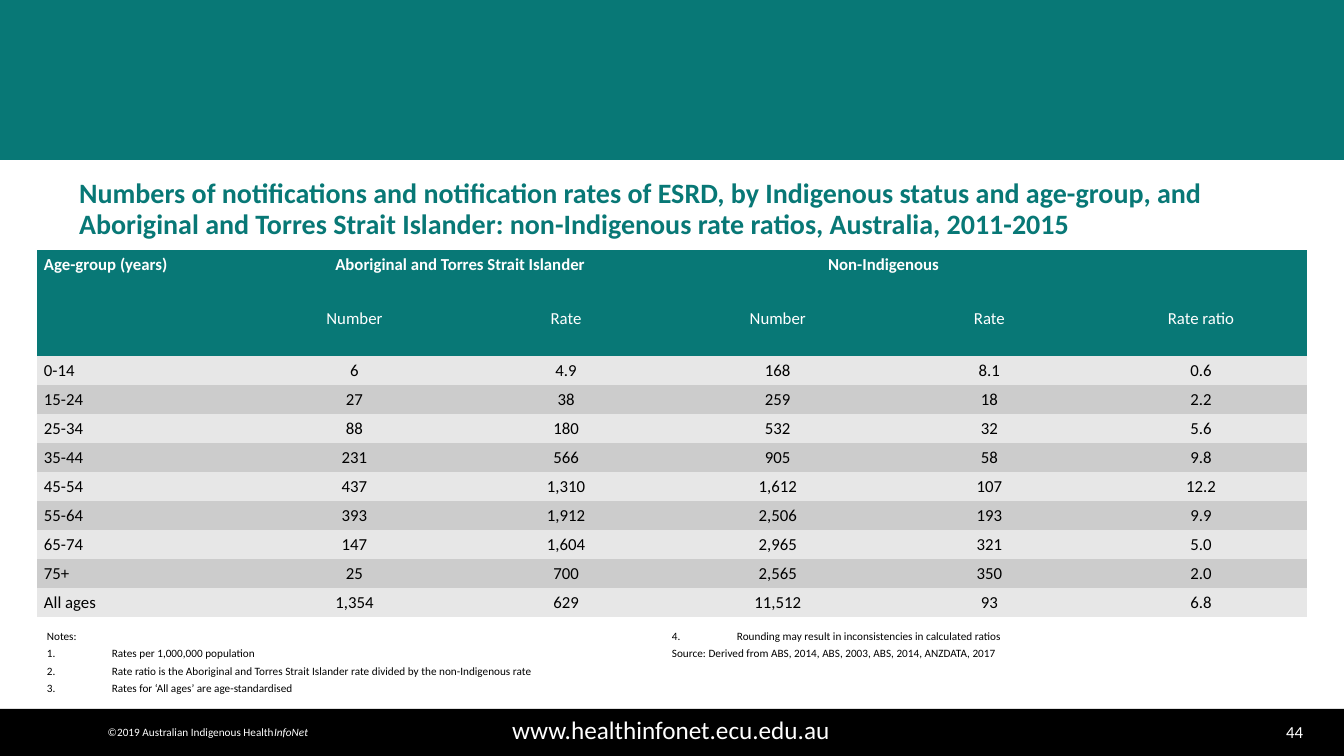
import pptx
import pptx.dml.color
import pptx.enum.shapes
import pptx.enum.text
import pptx.oxml
import pptx.oxml.ns
import pptx.util

PX = 914400 / 100.8
COLORS = {"teal": "087876", "black": "000000", "white": "FFFFFF",
          "light": "E7E7E7", "dark": "CCCCCC"}
ALIGN = pptx.enum.text.PP_ALIGN
ANCHOR = pptx.enum.text.MSO_ANCHOR
NO_GRID = "{2D5ABB26-0587-4C30-8999-92F81FD0307C}"


def px(n):
    return pptx.util.Emu(round(n * PX))


def rgb(name):
    return pptx.dml.color.RGBColor.from_string(COLORS[name])


def write(p, text, size=12, color="black", bold=False, italic=False,
          align=ALIGN.LEFT, after=0, line=None):
    p.alignment = align
    p.space_after = pptx.util.Pt(after)
    if line:
        p.line_spacing = line
    r = p.add_run()
    r.text = text
    r.font.name = "Calibri"
    r.font.size = pptx.util.Pt(size)
    r.font.bold = bold
    r.font.italic = italic
    r.font.color.rgb = rgb(color)


class Slide:
    def __init__(self, prs):
        self.s = prs.slides.add_slide(prs.slide_layouts[5])

    def band(self, x, y, w, h, color):
        sp = self.s.shapes.add_shape(pptx.enum.shapes.MSO_SHAPE.RECTANGLE,
                                     px(x), px(y), px(w), px(h))
        sp.shadow.inherit = False
        sp.fill.solid()
        sp.fill.fore_color.rgb = rgb(color)
        sp.line.fill.background()

    def title(self, x, y, w, h, text):
        sp = self.s.shapes.title
        sp.left, sp.top, sp.width, sp.height = px(x), px(y), px(w), px(h)
        tf = sp.text_frame
        tf.auto_size = pptx.enum.text.MSO_AUTO_SIZE.NONE
        tf.vertical_anchor = ANCHOR.MIDDLE
        write(tf.paragraphs[0], text, size=20, color="teal", bold=True, line=0.9)

    def box(self, x, y, w, h, wrap=True):
        tf = self.s.shapes.add_textbox(px(x), px(y), px(w), px(h)).text_frame
        tf.word_wrap = wrap
        return tf

    def label(self, x, y, w, h, text, wrap=True, **fmt):
        p = self.box(x, y, w, h, wrap).paragraphs[0]
        write(p, text, color="white", **fmt)
        return p

    def table(self, x, y, w, heights, rows, spans):
        cols = len(rows[0])
        tbl = self.s.shapes.add_table(len(rows), cols, px(x), px(y), px(w),
                                      px(sum(heights))).table
        tbl.horz_banding = False
        tbl._tbl.tblPr.find(pptx.oxml.ns.qn("a:tableStyleId")).text = NO_GRID
        for col in tbl.columns:
            col.width = px(w / cols)
        for i, row in enumerate(rows):
            tbl.rows[i].height = px(heights[i])
            header = i < 2
            fill = "teal" if header else ("light", "dark")[i % 2]
            for j, text in enumerate(row):
                cell = tbl.cell(i, j)
                cell.fill.solid()
                cell.fill.fore_color.rgb = rgb(fill)
                cell.vertical_anchor = ANCHOR.MIDDLE
                cell.margin_left = cell.margin_right = px(7)
                cell.margin_top = cell.margin_bottom = 0
                write(cell.text_frame.paragraphs[0], text, bold=i == 0,
                      color="white" if header else "black", after=5,
                      align=ALIGN.CENTER if j else ALIGN.LEFT)
        for i, first, last in spans:
            tbl.cell(i, first).merge(tbl.cell(i, last))

    def notes(self, x, y, w, h, items, source):
        tf = self.box(x, y, w, h)
        tf._txBody.bodyPr.set("numCol", "2")
        for i, text in enumerate(items):
            p = tf.paragraphs[0] if i == 0 else tf.add_paragraph()
            pPr = p._p.get_or_add_pPr()
            pPr.set("marL", str(px(65)))
            pPr.set("indent", str(px(-65)))
            tabs = pptx.oxml.parse_xml(
                "<a:tabLst %s/>" % pptx.oxml.ns.nsdecls("a"))
            for stop in (10, 50):
                tab = tabs.makeelement(pptx.oxml.ns.qn("a:tab"),
                                       {"pos": str(px(stop)), "algn": "l"})
                tabs.append(tab)
            pPr.append(tabs)
            write(p, text, size=8, after=3)
        write(tf.add_paragraph(), source, size=8, after=5, align=ALIGN.JUSTIFY)


def main():
    prs = pptx.Presentation()
    prs.slide_width, prs.slide_height = px(1344), px(756)
    slide = Slide(prs)

    # Bands and footer
    slide.band(-3, 0, 1347, 160, "teal")
    slide.band(0, 709, 1344, 47, "black")
    slide.label(1205, 717, 108, 30, "44", align=ALIGN.RIGHT)
    slide.label(62, 709, 1218, 39, "www.healthinfonet.ecu.edu.au",
                size=18, align=ALIGN.CENTER)
    p = slide.label(96, 720, 224, 24, "©2019 Australian Indigenous Health",
                    wrap=False, size=8, align=ALIGN.CENTER)
    write(p, "InfoNet", size=8, color="white", italic=True, align=ALIGN.CENTER)

    # Title
    slide.title(69, 168, 1208, 84,
                "Numbers of notifications and notification rates of ESRD, by "
                "Indigenous status and age-group, and Aboriginal and Torres Strait "
                "Islander: non-Indigenous rate ratios, Australia, 2011-2015")

    # Rates by age-group
    rows = [
        ["Age-group (years)", "Aboriginal and Torres Strait Islander", "",
         "Non-Indigenous", "", ""],
        ["", "Number", "Rate", "Number", "Rate", "Rate ratio"],
        ["0-14", "6", "4.9", "168", "8.1", "0.6"],
        ["15-24", "27", "38", "259", "18", "2.2"],
        ["25-34", "88", "180", "532", "32", "5.6"],
        ["35-44", "231", "566", "905", "58", "9.8"],
        ["45-54", "437", "1,310", "1,612", "107", "12.2"],
        ["55-64", "393", "1,912", "2,506", "193", "9.9"],
        ["65-74", "147", "1,604", "2,965", "321", "5.0"],
        ["75+", "25", "700", "2,565", "350", "2.0"],
        ["All ages", "1,354", "629", "11,512", "93", "6.8"],
    ]
    slide.table(37, 250, 1270, [29, 76] + [29] * 9, rows,
                spans=[(0, 1, 2), (0, 3, 4)])

    # Notes and source
    slide.notes(37, 624, 1270, 80, [
        "Notes:",
        "1.\tRates per 1,000,000 population",
        "2.\tRate ratio is the Aboriginal and Torres Strait Islander rate "
        "divided by the non-Indigenous rate",
        "3.\tRates for ‘All ages’ are age-standardised",
        "4.\tRounding may result in inconsistencies in calculated ratios",
    ], "Source: Derived from ABS, 2014, ABS, 2003, ABS, 2014, ANZDATA, 2017")

    prs.save("out.pptx")


if __name__ == "__main__":
    main()
